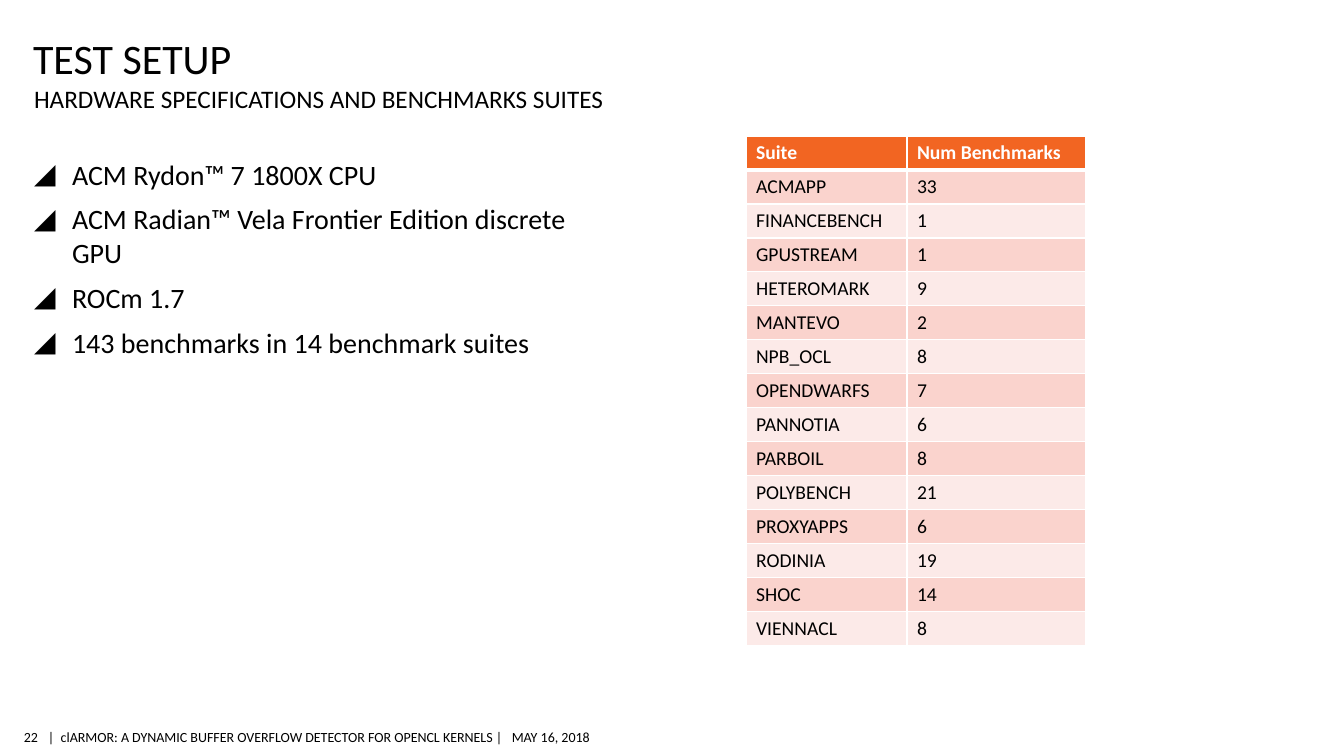
from lxml.etree import SubElement
from pptx import Presentation
from pptx.dml.color import RGBColor
from pptx.enum.text import MSO_ANCHOR, MSO_AUTO_SIZE, PP_ALIGN
from pptx.oxml.ns import qn
from pptx.util import Pt

EMU_PER_PX = 914400 / 100.8
FONT = "Calibri"
BLACK, WHITE, ORANGE = "000000", "FFFFFF", "F26522"
BANDS = ("FAD3CD", "FCEAE8")

HARDWARE = [
    "ACM Rydon™ 7 1800X CPU",
    "ACM Radian™ Vela Frontier Edition discrete GPU",
    "ROCm 1.7",
    "143 benchmarks in 14 benchmark suites",
]
SUITES = [
    ("Suite", "Num Benchmarks"),
    ("ACMAPP", 33),
    ("FINANCEBENCH", 1),
    ("GPUSTREAM", 1),
    ("HETEROMARK", 9),
    ("MANTEVO", 2),
    ("NPB_OCL", 8),
    ("OPENDWARFS", 7),
    ("PANNOTIA", 6),
    ("PARBOIL", 8),
    ("POLYBENCH", 21),
    ("PROXYAPPS", 6),
    ("RODINIA", 19),
    ("SHOC", 14),
    ("VIENNACL", 8),
]


def px(length):
    """Turn a length in px into EMU."""
    return round(length * EMU_PER_PX)


def color(value):
    """Turn a hex string into a colour."""
    return RGBColor.from_string(value)


def style(paragraph, size, ink=BLACK, bold=False):
    """Set the font of a whole paragraph."""
    font = paragraph.font
    font.name, font.size, font.bold = FONT, Pt(size), bold
    font.color.rgb = color(ink)


def place(shape, box, anchor, top_inset=0, bottom_inset=0):
    """Move a text shape to its box and set up its frame."""
    shape.left, shape.top, shape.width, shape.height = map(px, box)
    frame = shape.text_frame
    frame.auto_size = MSO_AUTO_SIZE.NONE
    frame.word_wrap = True
    frame.vertical_anchor = anchor
    frame.margin_left = frame.margin_right = 0
    frame.margin_top, frame.margin_bottom = px(top_inset), px(bottom_inset)
    return frame


def set_bullet(paragraph, character=None, indent=0):
    """Give a paragraph a hanging bullet, or none."""
    properties = paragraph._p.get_or_add_pPr()
    properties.set("marL", str(px(indent)))
    properties.set("indent", str(-px(indent)))
    if character is None:
        SubElement(properties, qn("a:buNone"))
        return
    bullet_color = SubElement(properties, qn("a:buClr"))
    SubElement(bullet_color, qn("a:srgbClr"), val=BLACK)
    SubElement(properties, qn("a:buFont"), typeface=FONT)
    SubElement(properties, qn("a:buChar"), char=character)


def add_heading(title, subtitle, box):
    """Fill the title and the subtitle line below it."""
    left, top, width, height = box
    title_height = height - 31
    frame = place(title, (left, top, width, title_height), MSO_ANCHOR.BOTTOM, 5)
    frame.text = "TEST SETUP"
    frame.paragraphs[0].alignment = PP_ALIGN.LEFT
    style(frame.paragraphs[0], 30)

    frame = place(subtitle, (left + 1, top + title_height, width, 31), MSO_ANCHOR.TOP)
    frame.text = "HARDWARE SPECIFICATIONS AND BENCHMARKS SUITES"
    paragraph = frame.paragraphs[0]
    paragraph.space_before = Pt(0)
    set_bullet(paragraph)
    style(paragraph, 18)


def add_hardware_list(body, box):
    """Fill the bulleted hardware list."""
    frame = place(body, box, MSO_ANCHOR.TOP, 5, 5)
    frame.text = "\n".join(HARDWARE)
    for index, paragraph in enumerate(frame.paragraphs):
        paragraph.space_before = Pt(8 if index else 0)
        set_bullet(paragraph, "◢", 38)
        style(paragraph, 20)


def set_borders(cell, **widths):
    """Draw white cell borders, with widths in points by side."""
    properties = cell._tc.get_or_add_tcPr()
    for side in "LRTB":
        line = SubElement(properties, qn(f"a:ln{side}"), w=str(Pt(widths.get(side, 1))))
        fill = SubElement(line, qn("a:solidFill"))
        SubElement(fill, qn("a:srgbClr"), val=WHITE)


def add_suite_table(slide, box):
    """Add the banded table of benchmark suites."""
    left, top, width, height = box
    frame = slide.shapes.add_table(len(SUITES), 2, *map(px, box))
    table = frame.table
    table.columns[0].width, table.columns[1].width = px(161), px(width - 161)
    for row_index, values in enumerate(SUITES):
        header = row_index == 0
        table.rows[row_index].height = px(height / len(SUITES))
        for column_index, value in enumerate(values):
            cell = table.cell(row_index, column_index)
            cell.text = str(value)
            cell.vertical_anchor = MSO_ANCHOR.BOTTOM
            set_borders(cell, T=3 if row_index == 1 else 1, B=3 if header else 1)
            cell.fill.solid()
            cell.fill.fore_color.rgb = color(ORANGE if header else BANDS[(row_index - 1) % 2])
            style(cell.text_frame.paragraphs[0], 14, WHITE if header else BLACK, header)


def add_footer(slide, box):
    """Add the page number and the footer line beside it."""
    left, top, width, height = box
    footer = "|  clARMOR: A DYNAMIC BUFFER OVERFLOW DETECTOR FOR OPENCL KERNELS |   MAY 16, 2018"
    parts = [
        ("22", left, 16, PP_ALIGN.RIGHT),
        (footer, left + 26, width - 26, PP_ALIGN.LEFT),
    ]
    for text, part_left, part_width, alignment in parts:
        part_box = (part_left, top, part_width, height)
        shape = slide.shapes.add_textbox(*map(px, part_box))
        frame = place(shape, part_box, MSO_ANCHOR.MIDDLE, 4, 4)
        frame.word_wrap = False
        frame.text = text
        frame.paragraphs[0].alignment = alignment
        style(frame.paragraphs[0], 10)


def main():
    """Build the test setup slide."""
    presentation = Presentation()
    presentation.slide_width, presentation.slide_height = px(1344), px(756)
    slide = presentation.slides.add_slide(presentation.slide_layouts[3])
    title, body, subtitle = slide.placeholders
    add_footer(slide, (22, 724, 580, 26))
    add_heading(title, subtitle, (33, 30, 1149, 84))
    add_hardware_list(body, (34, 152, 585, 554))
    add_suite_table(slide, (746, 136, 340, 510))
    presentation.save("out.pptx")


if __name__ == "__main__":
    main()
